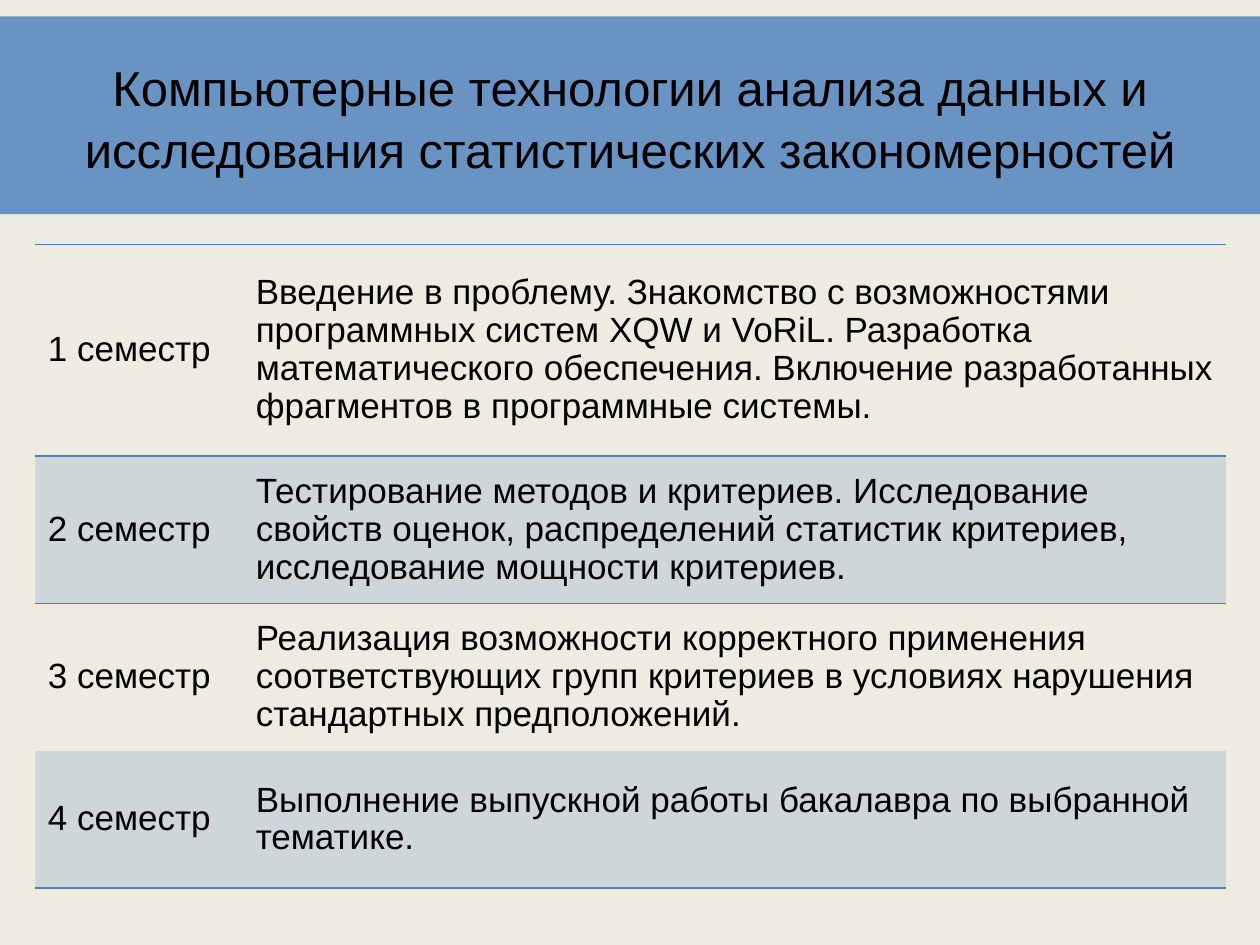
import dataclasses

import pptx
import pptx.dml.color
import pptx.enum.shapes
import pptx.enum.text
import pptx.oxml
import pptx.oxml.ns
import pptx.util

RGB = pptx.dml.color.RGBColor
BLUE = RGB(0x4F, 0x81, 0xBD)
BEIGE = RGB(0xEE, 0xEC, 0xE1)
BLACK = RGB(0, 0, 0)
ALIGN = pptx.enum.text.PP_ALIGN
MIDDLE = pptx.enum.text.MSO_ANCHOR.MIDDLE
WIDTH, HEIGHT = pptx.util.Inches(10), pptx.util.Inches(7.5)
NO_STYLE = "{2D5ABB26-0587-4C30-8999-92F81FD0307C}"
COLUMNS = (1.65, 7.8)
qn = pptx.oxml.ns.qn


@dataclasses.dataclass
class Box:
    """Place and size as shares of the slide."""
    left: float
    top: float
    width: float
    height: float

    def lengths(self) -> tuple[int, ...]:
        return (int(self.left * WIDTH), int(self.top * HEIGHT),
                int(self.width * WIDTH), int(self.height * HEIGHT))


@dataclasses.dataclass
class Term:
    name: str
    plan: str
    height: float
    shaded: bool = False
    edges: str = ""


TITLE = ("Компьютерные технологии анализа данных и "
         "исследования статистических закономерностей")
TERMS = [
    Term("1 семестр", "Введение в проблему. Знакомство с возможностями программных "
         "систем XQW и VoRiL. Разработка математического обеспечения. Включение "
         "разработанных фрагментов в программные системы.", 1.68, edges="TB"),
    Term("2 семестр", "Тестирование методов и критериев. Исследование свойств оценок, "
         "распределений статистик критериев, исследование мощности критериев.",
         1.17, shaded=True, edges="T"),
    Term("3 семестр", "Реализация возможности корректного применения соответствующих "
         "групп критериев в условиях нарушения стандартных предположений.", 1.17),
    Term("4 семестр", "Выполнение выпускной работы бакалавра по выбранной тематике.",
         1.09, shaded=True, edges="B"),
]


def write(frame, text: str, size: int, align, spacing: float) -> None:
    para = frame.paragraphs[0]
    para.alignment, para.line_spacing = align, spacing
    run = para.add_run()
    run.text = text
    looks = {"name": "Arial", "size": pptx.util.Pt(size)}
    for key, value in looks.items():
        setattr(run.font, key, value)
    run.font.color.rgb = BLACK


def tint(fill, owner, percent: int) -> None:
    """Fill with blue at the given opacity; owner is the XML holding the fill."""
    fill.solid()
    fill.fore_color.rgb = BLUE
    color = owner.find(qn("a:solidFill")).find(qn("a:srgbClr"))
    alpha = color.makeelement(qn("a:alpha"), {"val": str(percent * 1000)})
    color.append(alpha)


def rule(props, edge: str) -> None:
    """Add a thin blue border on the edge T or B of a cell."""
    props.append(pptx.oxml.parse_xml(
        f'<a:ln{edge} {pptx.oxml.ns.nsdecls("a")} w="12700"><a:solidFill>'
        f'<a:srgbClr val="{BLUE}"/></a:solidFill></a:ln{edge}>'))


def draw_head(slide) -> None:
    band = slide.shapes.add_shape(pptx.enum.shapes.MSO_SHAPE.RECTANGLE,
                                  *Box(0, 0.13 / 7.5, 1, 1.57 / 7.5).lengths())
    band.shadow.inherit = False
    tint(band.fill, band.element.spPr, 83)
    band.line.fill.background()
    frame = slide.shapes.add_textbox(*Box(0.05, 0.04, 0.9, 1 / 6).lengths()).text_frame
    for key, value in {"word_wrap": True, "vertical_anchor": MIDDLE}.items():
        setattr(frame, key, value)
    write(frame, TITLE, 28, ALIGN.CENTER, 1.05)


def draw_terms(slide) -> None:
    place = Box(0.028, 1.94 / 7.5, sum(COLUMNS) / 10,
                sum(term.height for term in TERMS) / 7.5)
    holder = slide.shapes.add_table(len(TERMS), len(COLUMNS), *place.lengths())
    table = holder.table
    table.first_row = table.horz_banding = False
    for style in holder.element.iter(qn("a:tableStyleId")):
        style.text = NO_STYLE
    for column, width in zip(table.columns, COLUMNS):
        column.width = pptx.util.Inches(width)
    for row, term in zip(table.rows, TERMS):
        row.height = pptx.util.Inches(term.height)
        for cell, text in zip(row.cells, (term.name, term.plan)):
            cell.vertical_anchor = MIDDLE
            write(cell.text_frame, text, 20, ALIGN.LEFT, 0.97)
            props = cell._tc.get_or_add_tcPr()
            for edge in term.edges:
                rule(props, edge)
            if term.shaded:
                tint(cell.fill, props, 20)
            else:
                cell.fill.background()


def main() -> None:
    deck = pptx.Presentation()
    deck.slide_width, deck.slide_height = WIDTH, HEIGHT
    slide = deck.slides.add_slide(deck.slide_layouts[6])
    slide.background.fill.solid()
    slide.background.fill.fore_color.rgb = BEIGE
    draw_head(slide)
    draw_terms(slide)
    deck.save("out.pptx")


if __name__ == "__main__":
    main()
